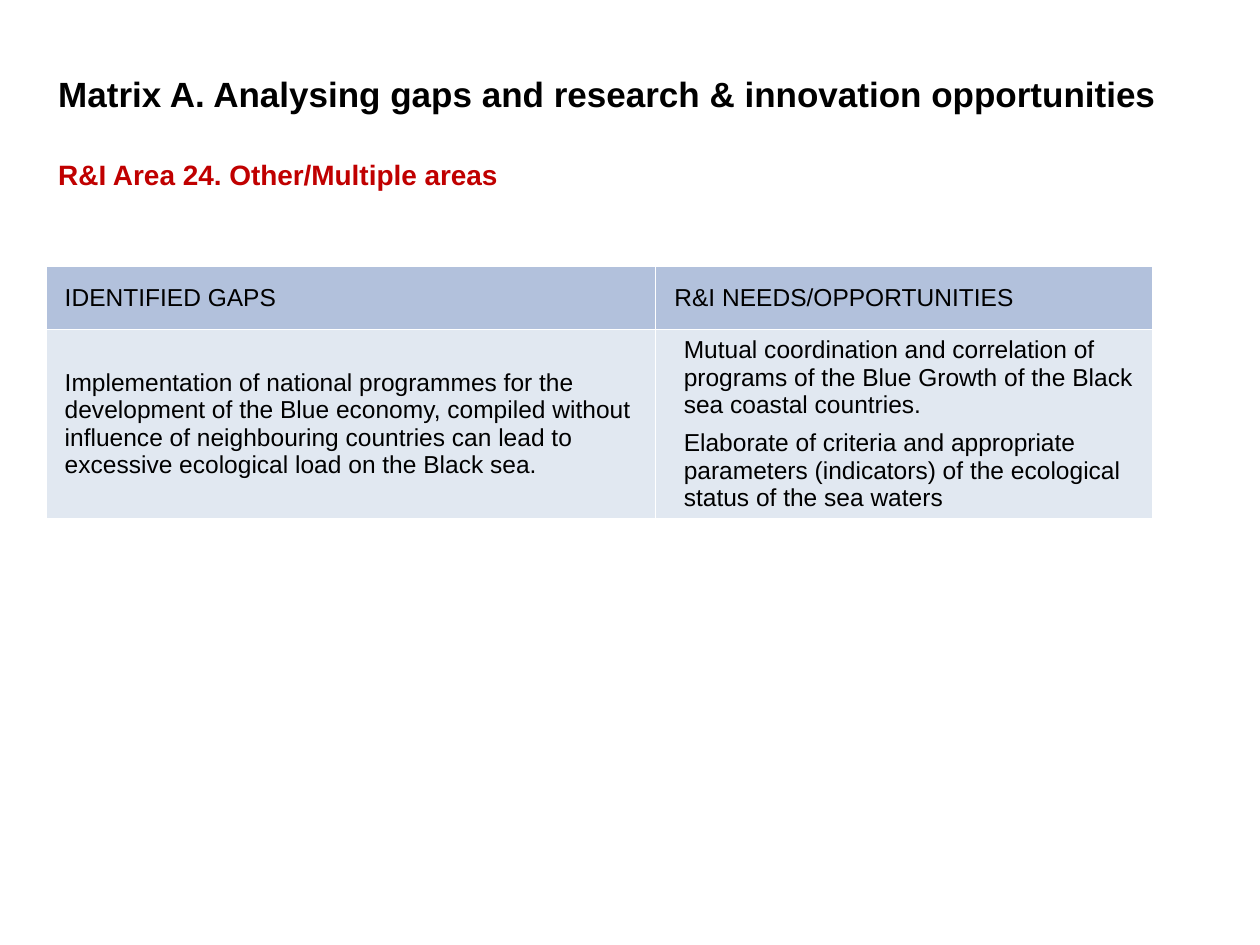
from pptx import Presentation
from pptx.dml.color import RGBColor
from pptx.enum.text import MSO_ANCHOR
from pptx.oxml import parse_xml
from pptx.oxml.ns import nsdecls
from pptx.util import Pt

MID, TOP = MSO_ANCHOR.MIDDLE, MSO_ANCHOR.TOP
BLACK = RGBColor(0x00, 0x00, 0x00)
RED = RGBColor(0xC0, 0x00, 0x00)
WHITE = RGBColor(0xFF, 0xFF, 0xFF)
HEAD = RGBColor(0xB2, 0xC1, 0xDC)
BODY = RGBColor(0xE1, 0xE8, 0xF1)

COLS = (348.4, 284.4)
ROWS = (36, 108.4)
GAPS = [
    ["IDENTIFIED GAPS"],
    ["Implementation of national programmes for the development of the Blue "
     "economy, compiled without influence of neighbouring countries can lead "
     "to excessive ecological load on the Black sea."],
]
NEEDS = [
    ["R&I NEEDS/OPPORTUNITIES"],
    ["Mutual coordination and correlation of programs of the Blue Growth of "
     "the Black sea coastal countries.",
     "Elaborate of criteria and appropriate parameters (indicators) of the "
     "ecological status of the sea waters"],
]


def style(font, color, **form):
    for key, val in {"name": "Arial", **form}.items():
        setattr(font, key, val)
    font.color.rgb = color


def add_line(slide, box, text, size, color, anchor):
    """Bold heading in a wrapped text box."""
    frame = slide.shapes.add_textbox(*map(Pt, box)).text_frame
    frame.word_wrap = True
    frame.vertical_anchor = anchor
    run = frame.paragraphs[0].add_run()
    run.text = text
    style(run.font, color, size=Pt(size), bold=True)


def add_edges(cell):
    """Thin white rule on every side, placed ahead of the fill."""
    props = cell._tc.get_or_add_tcPr()
    for spot, side in enumerate(("lnL", "lnR", "lnT", "lnB")):
        props.insert(spot, parse_xml(
            f'<a:{side} {nsdecls("a")} w="{Pt(1)}"><a:solidFill>'
            f'<a:srgbClr val="{WHITE}"/></a:solidFill></a:{side}>'))


def fill_cell(cell, paras, color, pad):
    form = {"vertical_anchor": MID, "margin_left": Pt(pad),
            "margin_right": Pt(pad), "margin_top": 0, "margin_bottom": 0}
    for key, val in form.items():
        setattr(cell, key, val)
    cell.fill.solid()
    cell.fill.fore_color.rgb = color
    add_edges(cell)
    frame = cell.text_frame
    for num, text in enumerate(paras):
        para = frame.add_paragraph() if num else frame.paragraphs[0]
        if num:
            para.space_before = Pt(6)
        para._p.get_or_add_pPr().set("marL", str(Pt(10.8)))
        run = para.add_run()
        run.text = text
        style(run.font, BLACK, size=Pt(14), bold=False)


def add_matrix(slide, left, top):
    """Table of gaps against needs."""
    table = slide.shapes.add_table(
        len(ROWS), len(COLS), Pt(left), Pt(top),
        Pt(sum(COLS)), Pt(sum(ROWS))).table
    for col, width in zip(table.columns, COLS):
        col.width = Pt(width)
    for row, high in zip(table.rows, ROWS):
        row.height = Pt(high)
    for c, col in enumerate((GAPS, NEEDS)):
        for r, paras in enumerate(col):
            pad = 5.4 if len(paras) > 1 else 0
            fill_cell(table.cell(r, c), paras, BODY if r else HEAD, pad)


def main():
    deck = Presentation()
    deck.slide_width, deck.slide_height = Pt(720), Pt(540)
    slide = deck.slides.add_slide(deck.slide_layouts[6])
    left = 26.2
    # Title and area
    add_line(slide, (left, 31, 642.5, 45.4),
             "Matrix A. Analysing gaps and research & innovation opportunities",
             20, BLACK, MID)
    add_line(slide, (left, 86.4, 466.6, 26.6),
             "R&I Area 24. Other/Multiple areas", 16, RED, TOP)
    # Matrix
    add_matrix(slide, left, 152.2)
    deck.save("out.pptx")


if __name__ == "__main__":
    main()
